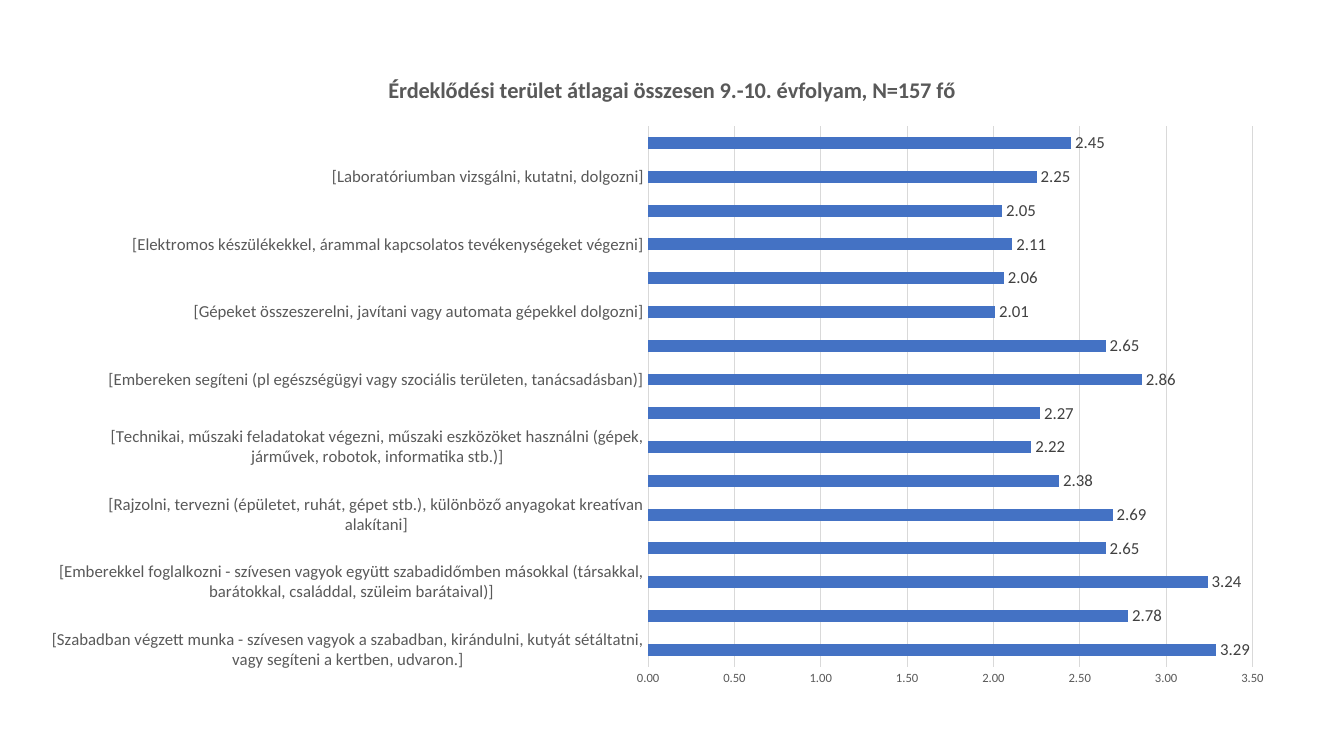
from lxml.etree import SubElement
from pptx import Presentation
from pptx.chart.data import CategoryChartData
from pptx.dml.color import RGBColor
from pptx.enum.chart import XL_CHART_TYPE as ChartType
from pptx.enum.chart import XL_LABEL_POSITION as LabelPosition
from pptx.enum.chart import XL_TICK_MARK as TickMark
from pptx.oxml import parse_xml
from pptx.oxml.ns import nsdecls, qn
from pptx.util import Inches, Pt


def style_font(font, size, color, bold=False):
    font.name = "Calibri"
    font.size = Pt(size)
    font.bold = bold
    font.color.rgb = RGBColor.from_string(color)


def set_layout(parent, **settings):
    for old_layout in parent.findall(qn("c:layout")):
        parent.remove(old_layout)
    layout = parse_xml(f"<c:layout {nsdecls('c')}/>")
    manual = SubElement(layout, qn("c:manualLayout"))
    for name, value in settings.items():
        SubElement(manual, qn(f"c:{name}")).set("val", str(value))
    return layout


averages = [
    ("[Szabadban végzett munka - szívesen vagyok a szabadban, kirándulni, kutyát sétáltatni, vagy segíteni a kertben, udvaron.]", 3.29),
    ("", 2.78),
    ("[Emberekkel foglalkozni - szívesen vagyok együtt szabadidőmben másokkal (társakkal, barátokkal, családdal, szüleim barátaival)]", 3.24),
    ("", 2.65),
    ("[Rajzolni, tervezni (épületet, ruhát, gépet stb.), különböző anyagokat kreatívan alakítani]", 2.69),
    ("", 2.38),
    ("[Technikai, műszaki feladatokat végezni, műszaki eszközöket használni (gépek, járművek, robotok, informatika stb.)]", 2.22),
    ("", 2.27),
    ("[Embereken segíteni (pl egészségügyi vagy szociális területen, tanácsadásban)]", 2.86),
    ("", 2.65),
    ("[Gépeket összeszerelni, javítani vagy automata gépekkel dolgozni]", 2.01),
    ("", 2.06),
    ("[Elektromos készülékekkel, árammal kapcsolatos tevékenységeket végezni]", 2.11),
    ("", 2.05),
    ("[Laboratóriumban vizsgálni, kutatni, dolgozni]", 2.25),
    ("", 2.45),
]

presentation = Presentation()
presentation.slide_width = Inches(13.33)
presentation.slide_height = Inches(7.5)
slide = presentation.slides.add_slide(presentation.slide_layouts[6])

chart_data = CategoryChartData(number_format="0.00")
chart_data.categories = [interest for interest, average in averages]
chart_data.add_series("Series 1", [average for interest, average in averages])
chart = slide.shapes.add_chart(
    ChartType.BAR_CLUSTERED, Inches(0.46), Inches(0.51), Inches(12.41), Inches(6.57), chart_data
).chart
chart.has_legend = False
style_font(chart.font, 10, "000000")

chart.has_title = True
title_run = chart.chart_title.text_frame.paragraphs[0].add_run()
title_run.text = "Érdeklődési terület átlagai összesen 9.-10. évfolyam, N=157 fő"
style_font(title_run.font, 16, "595959", bold=True)
chart.chart_title.include_in_layout = False
title_element = chart.chart_title._element
title_layout = set_layout(title_element, xMode="edge", yMode="edge", x=0.27, y=0.03)
title_element.find(qn("c:tx")).addnext(title_layout)

plot = chart.plots[0]
plot.gap_width = 182
plot.vary_by_categories = False
plot_area = chart._chartSpace.chart.plotArea
plot_layout = set_layout(
    plot_area, layoutTarget="inner", xMode="edge", yMode="edge", x=0.481, y=0.113, w=0.483, h=0.816
)
plot_area.insert(0, plot_layout)

bars = plot.series[0]
bars.format.fill.solid()
bars.format.fill.fore_color.rgb = RGBColor.from_string("4472C4")
labels = bars.data_labels
labels.show_value = True
labels.number_format = "0.00"
labels.number_format_is_linked = False
labels.position = LabelPosition.OUTSIDE_END
style_font(labels.font, 12, "404040")

interest_axis = chart.category_axis
average_axis = chart.value_axis
for axis, size in ((interest_axis, 12), (average_axis, 9)):
    axis.major_tick_mark = TickMark.NONE
    axis.minor_tick_mark = TickMark.NONE
    style_font(axis.tick_labels.font, size, "595959")

average_axis.minimum_scale = 0
average_axis.maximum_scale = 3.5
average_axis.major_unit = 0.5
average_axis.tick_labels.number_format = "0.00"
average_axis.tick_labels.number_format_is_linked = False
average_axis.format.line.fill.background()
average_axis.has_major_gridlines = True
for line in (interest_axis.format.line, average_axis.major_gridlines.format.line):
    line.width = Pt(0.75)
    line.color.rgb = RGBColor.from_string("D9D9D9")

label_skip = parse_xml(f'<c:tickLblSkip {nsdecls("c")} val="2"/>')
interest_axis._element.find(qn("c:noMultiLvlLbl")).addprevious(label_skip)

presentation.save("out.pptx")
